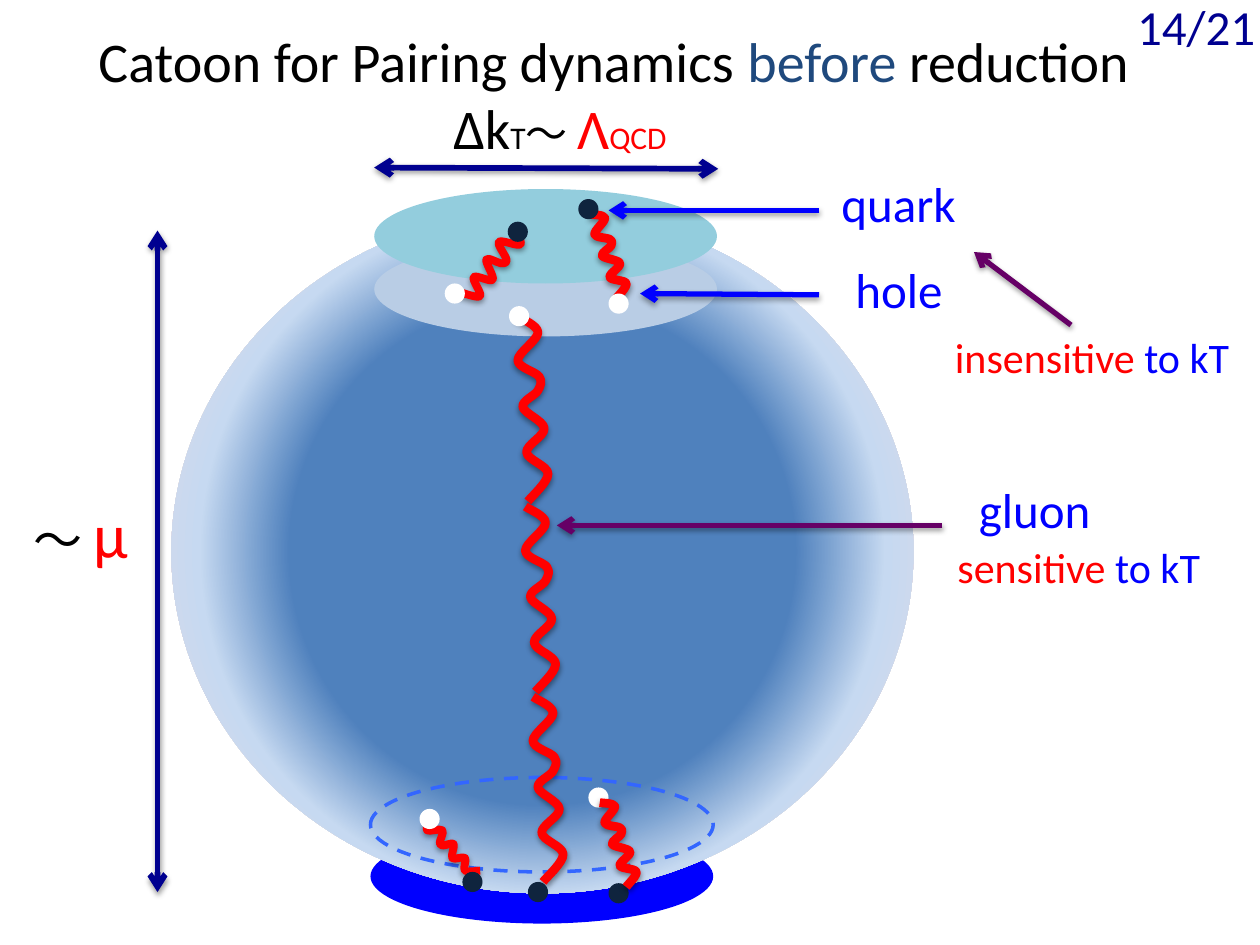
from lxml.etree import SubElement
from pptx import Presentation
from pptx.dml.color import RGBColor
from pptx.enum.dml import MSO_LINE
from pptx.enum.shapes import MSO_CONNECTOR, MSO_SHAPE
from pptx.enum.text import MSO_AUTO_SIZE, PP_ALIGN
from pptx.oxml.ns import qn
from pptx.util import Inches, Pt

C = {"black": "000000", "navy": "000090", "title": "1F497D", "blue": "0000FF",
     "red": "FF0000", "purple": "660066", "dash": "3366FF", "quark": "0F243E",
     "hole": "FFFFFF", "lid": "93CDDD", "rim": "B9CDE5",
     "core": "4F81BD", "halo": "C6D9F1", "edge": "F2DCDB"}

LABELS = [
    ((0.58, 0.16, 8.58, 0.64), PP_ALIGN.CENTER,
     [("Catoon for Pairing dynamics ", 32, "black"), ("before", 32, "title"),
      (" reduction", 32, "black")]),
    ((8.75, -0.08, 1.31, 0.57), PP_ALIGN.RIGHT, [("14/21", 28, "navy")]),
    ((3.5, 0.69, 2.5, 0.64), PP_ALIGN.LEFT,
     [("Δk", 32, "black"), ("T", 18, "black"), ("〜 ", 24, "black"),
      ("Λ", 32, "red"), ("QCD", 18, "red")]),
    ((0.17, 3.88, 1.18, 0.71), PP_ALIGN.LEFT, [("〜 ", 28, "black"), ("μ", 36, "red")]),
    ((6.58, 1.33, 1.42, 0.57), PP_ALIGN.LEFT, [("quark", 28, "blue")]),
    ((6.69, 2.01, 1.22, 0.57), PP_ALIGN.LEFT, [("hole", 28, "blue")]),
    ((7.67, 3.76, 1.22, 0.57), PP_ALIGN.LEFT, [("gluon", 28, "blue")]),
    ((7.48, 2.58, 2.6, 0.5), PP_ALIGN.LEFT,
     [("insensitive", 24, "red"), (" to kT", 24, "blue")]),
    ((7.5, 4.25, 2.5, 0.5), PP_ALIGN.LEFT,
     [("sensitive ", 24, "red"), ("to kT", 24, "blue")]),
]

ARROWS = [
    ((2.97, 1.33), (5.7, 1.34), "navy", 3.25, True),
    ((1.25, 1.83), (1.25, 7.08), "navy", 3.25, True),
    ((6.5, 1.67), (4.83, 1.67), "blue", 3, False),
    ((6.5, 2.34), (5.08, 2.33), "blue", 3, False),
    ((8.5, 2.58), (7.73, 2), "purple", 3, False),
    ((7.48, 4.17), (4.42, 4.17), "purple", 3, False),
]

DISC_W, DISC_H, DOT = 2.72, 0.75, 0.16
QUARKS = [(4.59, 1.58), (4.03, 1.76), (4.19, 7), (3.67, 6.92), (4.83, 7.01)]
HOLES = [(3.53, 2.25), (4.83, 2.33), (4.04, 2.43), (4.67, 6.25), (3.33, 6.42)]

TOP_LEFT = [(4.08, 1.81), (4.13, 1.94), (3.96, 1.92), (4.02, 2.06), (3.98, 2.09),
            (3.86, 2.06), (3.91, 2.22), (3.76, 2.2), (3.81, 2.35), (3.65, 2.32)]
BOTTOM_LEFT = [(3.41, 6.51), (3.39, 6.59), (3.51, 6.59), (3.49, 6.69), (3.52, 6.71),
               (3.6, 6.7), (3.59, 6.81), (3.69, 6.81), (3.69, 6.91), (3.81, 6.91)]
RIGHT = [(4.68, 1.7), (4.8, 1.73), (4.72, 1.86), (4.84, 1.9), (4.85, 1.95),
         (4.78, 2.03), (4.92, 2.09), (4.84, 2.2), (4.97, 2.25), (4.89, 2.37)]
LONG = [(4.11, 2.51), (4.27, 2.64), (4.11, 2.86), (4.28, 2.99), (4.27, 3.1),
        (4.15, 3.23), (4.32, 3.4), (4.18, 3.59), (4.35, 3.76), (4.19, 3.98)]
LONG_STEP = (0.06, 1.51)
RIGHT_STEP = (0.08, 4.67)


def rgb(name):
    return RGBColor.from_string(C[name])


def add_gradient(sp, stops):
    sp.fill.solid()
    solid = sp._element.spPr.find(qn("a:solidFill"))
    grad = solid.makeelement(qn("a:gradFill"), {"rotWithShape": "1"})
    gs = SubElement(grad, qn("a:gsLst"))
    for pos, name in stops:
        stop = SubElement(gs, qn("a:gs"), pos=str(pos * 1000))
        SubElement(stop, qn("a:srgbClr"), val=C[name])
    circle = SubElement(grad, qn("a:path"), {"path": "circle"})
    SubElement(circle, qn("a:fillToRect"), dict.fromkeys("ltrb", "50000"))
    solid.getparent().replace(solid, grad)


def add_shadow(sp):
    effects = SubElement(sp._element.spPr, qn("a:effectLst"))
    shadow = SubElement(effects, qn("a:outerShdw"), blurRad="40000", dist="20000",
                        dir="5400000", rotWithShape="0")
    color = SubElement(shadow, qn("a:srgbClr"), val=C["black"])
    SubElement(color, qn("a:alpha"), val="38000")


def add_text(slide, runs, box, align):
    tf = slide.shapes.add_textbox(*map(Inches, box)).text_frame
    tf.word_wrap = True
    tf.auto_size = MSO_AUTO_SIZE.SHAPE_TO_FIT_TEXT
    p = tf.paragraphs[0]
    p.alignment = align
    for text, size, color in runs:
        r = p.add_run()
        r.text = text
        r.font.name = "Calibri"
        r.font.size = Pt(size)
        r.font.color.rgb = rgb(color)


def add_ellipse(slide, x, y, w, h, fill=None, line=None):
    sp = slide.shapes.add_shape(MSO_SHAPE.OVAL, *map(Inches, (x, y, w, h)))
    sp.shadow.inherit = False
    if fill:
        sp.fill.solid()
        sp.fill.fore_color.rgb = rgb(fill)
    else:
        sp.fill.background()
    if line:
        sp.line.color.rgb = rgb(line)
        sp.line.width = Pt(2)
        sp.line.dash_style = MSO_LINE.DASH
    else:
        sp.line.fill.background()
    return sp


def add_arrow(slide, start, end, color, width, double):
    sp = slide.shapes.add_connector(MSO_CONNECTOR.STRAIGHT, *map(Inches, start + end))
    sp.line.color.rgb = rgb(color)
    sp.line.width = Pt(width)
    ln = sp.line._get_or_add_ln()
    if double:
        SubElement(ln, qn("a:headEnd"), type="arrow")
    SubElement(ln, qn("a:tailEnd"), type="arrow")
    add_shadow(sp)


def shifted(points, step, n=1):
    return [(x + n * step[0], y + n * step[1]) for x, y in points]


def curve_segments(sp, points):
    ends = [points[0]] + points + [points[-1]]
    lines = list(sp._element.spPr.iter(qn("a:lnTo")))
    for line, a, b, c, d in zip(lines, ends, ends[1:], ends[2:], ends[3:]):
        curve = line.makeelement(qn("a:cubicBezTo"), {})
        leave = [q + (r - p) / 6 for p, q, r in zip(a, b, c)]
        arrive = [r - (s - q) / 6 for q, r, s in zip(b, c, d)]
        for x, y in (leave, arrive, c):
            SubElement(curve, qn("a:pt"), x=str(round(x - sp.left)),
                       y=str(round(y - sp.top)))
        line.getparent().replace(line, curve)


def add_wave(slide, points, width=5):
    anchors = [(Inches(x), Inches(y)) for x, y in points]
    fb = slide.shapes.build_freeform(*anchors[0])
    fb.add_line_segments(anchors[1:], close=False)
    sp = fb.convert_to_shape()
    curve_segments(sp, anchors)
    sp.fill.background()
    sp.line.color.rgb = rgb("red")
    sp.line.width = Pt(width)
    add_shadow(sp)


def main():
    prs = Presentation()
    prs.slide_width, prs.slide_height = Inches(10), Inches(7.5)
    slide = prs.slides.add_slide(prs.slide_layouts[6])

    add_ellipse(slide, 2.94, 6.58, DISC_W, DISC_H, fill="blue")
    ball = add_ellipse(slide, 1.36, 1.67, 5.89, 5.42)
    add_gradient(ball, [(50, "core"), (68, "halo"), (100, "edge")])
    add_ellipse(slide, 2.97, 1.92, DISC_W, DISC_H, fill="rim")
    add_ellipse(slide, 2.94, 6.17, DISC_W, DISC_H, line="dash")
    add_ellipse(slide, 2.97, 1.5, DISC_W, DISC_H, fill="lid")

    add_wave(slide, TOP_LEFT, 4.5)
    add_wave(slide, RIGHT)
    for n in range(3):
        add_wave(slide, shifted(LONG, LONG_STEP, n))
    add_wave(slide, BOTTOM_LEFT, 4.5)
    for color, spots in (("quark", QUARKS), ("hole", HOLES)):
        for x, y in spots:
            add_ellipse(slide, x, y, DOT, DOT, fill=color)
    add_wave(slide, shifted(RIGHT, RIGHT_STEP))

    for arrow in ARROWS:
        add_arrow(slide, *arrow)
    for box, align, runs in LABELS:
        add_text(slide, runs, box=box, align=align)
    prs.save("out.pptx")


if __name__ == "__main__":
    main()
